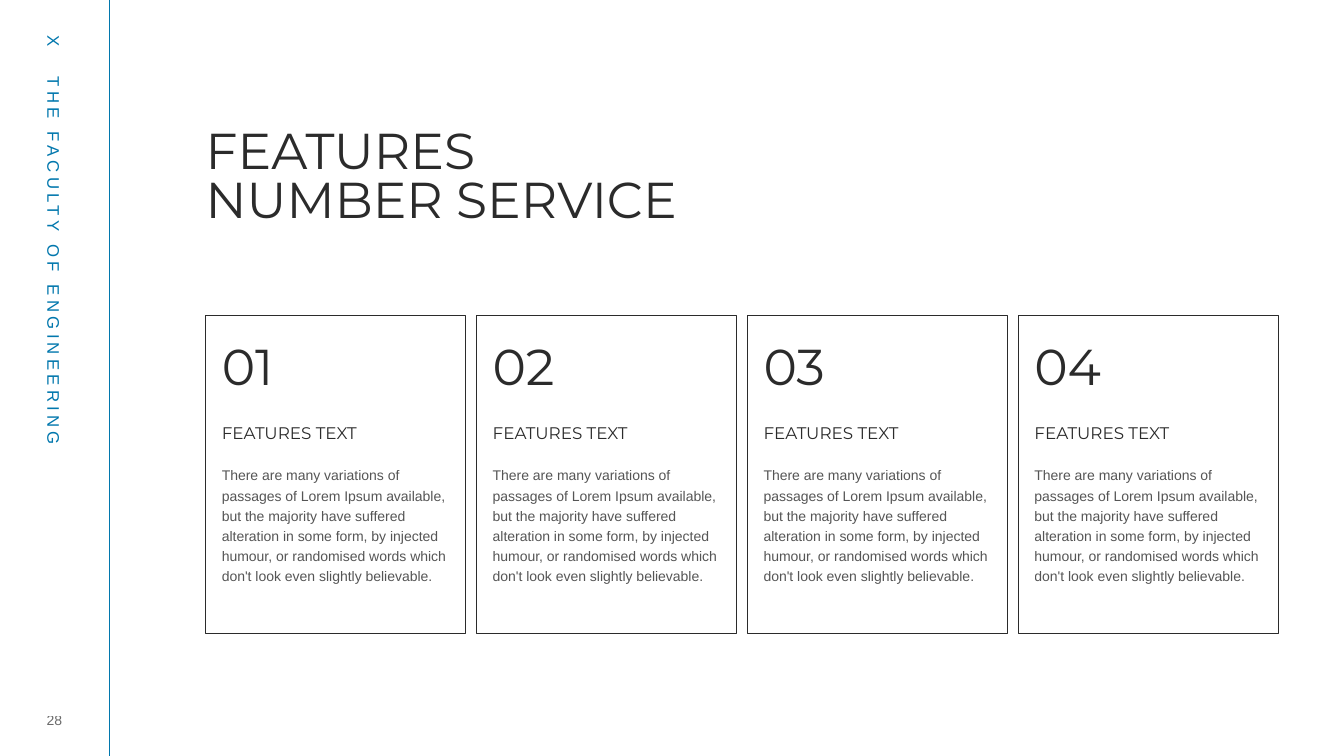
from copy import deepcopy

from lxml.etree import SubElement
from pptx import Presentation
from pptx.dml.color import RGBColor
from pptx.enum.shapes import MSO_CONNECTOR, MSO_SHAPE
from pptx.enum.text import MSO_ANCHOR, MSO_AUTO_SIZE, PP_ALIGN
from pptx.oxml.ns import qn
from pptx.util import Inches, Pt

COLORS = {"ink": "2B2B2B", "accent": "0177AD", "paper": "FFFFFF"}
HEADING_FONT = "Montserrat"
BODY_FONT = "Arial"
FEATURE_NUMBERS = ["01", "02", "03", "04"]
FEATURE_HEADING = "FEATURES TEXT"
FEATURE_BODY = (
    "There are many variations of passages of Lorem Ipsum available, "
    "but the majority have suffered alteration in some form, by injected "
    "humour, or randomised words which don't look even slightly believable."
)


def rgb(name):
    return RGBColor.from_string(COLORS[name])


def format_runs(paragraph, size, font, color="ink", opacity=100):
    for run in paragraph.runs:
        run.font.size = Pt(size)
        run.font.name = font
        run.font.color.rgb = rgb(color)
        if opacity < 100:
            tint = run._r.rPr.find(f".//{qn('a:srgbClr')}")
            SubElement(tint, qn("a:alpha"), val=str(opacity * 1000))


def set_frame(frame, insets, anchor=MSO_ANCHOR.TOP):
    frame.word_wrap = True
    frame.auto_size = MSO_AUTO_SIZE.NONE
    frame.vertical_anchor = anchor
    frame.margin_left, frame.margin_top, frame.margin_right, frame.margin_bottom = (
        Inches(inset) for inset in insets
    )


def add_text(slide, box, text, size, font, spacing=1.0, opacity=100):
    label = slide.shapes.add_textbox(*map(Inches, box))
    set_frame(label.text_frame, (0, 0.05, 0, 0.05))
    label.text_frame.text = text
    paragraph = label.text_frame.paragraphs[0]
    paragraph.line_spacing = spacing
    format_runs(paragraph, size, font, opacity=opacity)
    return label


def add_sidebar(slide, left, top, width, height):
    edge = Inches(left + width)
    divider = slide.shapes.add_connector(
        MSO_CONNECTOR.STRAIGHT, edge, Inches(top), edge, Inches(top + height)
    )
    divider.line.color.rgb = rgb("accent")
    divider.line.width = Pt(0.5)
    SubElement(divider._element.spPr, qn("a:effectLst"))

    faculty = slide.shapes.add_textbox(
        Inches(left - 2.3), Inches(top + 2.94), Inches(5.67), Inches(0.3)
    )
    faculty.rotation = 90
    set_frame(faculty.text_frame, (0.1, 0.05, 0.1, 0.05))
    faculty.text_frame.text = "X\tTHE FACULTY OF ENGINEERING"
    paragraph = faculty.text_frame.paragraphs[0]
    tabs = SubElement(paragraph._p.get_or_add_pPr(), qn("a:tabLst"))
    SubElement(tabs, qn("a:tab"), pos=str(Inches(0.41)), algn="l")
    format_runs(paragraph, 12, BODY_FONT, "accent")
    for run in paragraph.runs:
        run._r.rPr.set("spc", "300")

    page_box = (left + 0.26, top + height - 0.48, 0.56, 0.25)
    page_number = add_text(slide, page_box, "28", 10, BODY_FONT, opacity=70)
    set_frame(page_number.text_frame, (0, 0, 0, 0), MSO_ANCHOR.MIDDLE)
    page_number.text_frame.paragraphs[0].alignment = PP_ALIGN.CENTER


def add_title(slide, left, top, width, height):
    title = slide.shapes.title
    title.left, title.top = Inches(left), Inches(top)
    title.width, title.height = Inches(width), Inches(height)
    set_frame(title.text_frame, (0, 0.21, 0, 0))
    title.text_frame.text = "FEATURES\vNUMBER SERVICE"
    paragraph = title.text_frame.paragraphs[0]
    paragraph.alignment = PP_ALIGN.LEFT
    paragraph.line_spacing = 0.8
    format_runs(paragraph, 36, HEADING_FONT)
    for line_break in paragraph._p.findall(qn("a:br")):
        line_break.append(deepcopy(paragraph.runs[0]._r.rPr))


def add_feature_card(slide, left, top, width, height, number):
    card = slide.shapes.add_shape(
        MSO_SHAPE.RECTANGLE, Inches(left), Inches(top), Inches(width), Inches(height)
    )
    card.shadow.inherit = False
    card.fill.background()
    card.line.color.rgb = rgb("ink")
    card.line.width = Pt(0.5)

    text_left, text_width = left + 0.16, width - 0.32
    add_text(slide, (text_left, top + 0.31, text_width, 0.57),
             number, 36, HEADING_FONT, 0.7)
    add_text(slide, (text_left, top + 1.07, text_width, 0.26),
             FEATURE_HEADING, 12, HEADING_FONT, 0.7)
    add_text(slide, (text_left, top + 1.42, text_width, 1.51),
             FEATURE_BODY, 10, BODY_FONT, 1.2, 80)


def add_feature_row(slide, left, top, width, height):
    card_width = 2.58
    pitch = (width - card_width) / (len(FEATURE_NUMBERS) - 1)
    for index, number in enumerate(FEATURE_NUMBERS):
        add_feature_card(slide, left + index * pitch, top, card_width, height, number)


def main():
    presentation = Presentation()
    presentation.slide_width = Inches(13.33)
    presentation.slide_height = Inches(7.5)
    slide = presentation.slides.add_slide(presentation.slide_layouts[5])
    slide.background.fill.solid()
    slide.background.fill.fore_color.rgb = rgb("paper")
    add_sidebar(slide, 0, 0, 1.08, 7.5)
    add_title(slide, 2.04, 1.09, 8.51, 1.77)
    add_feature_row(slide, 2.04, 3.13, 10.64, 3.15)
    presentation.save("out.pptx")


if __name__ == "__main__":
    main()
